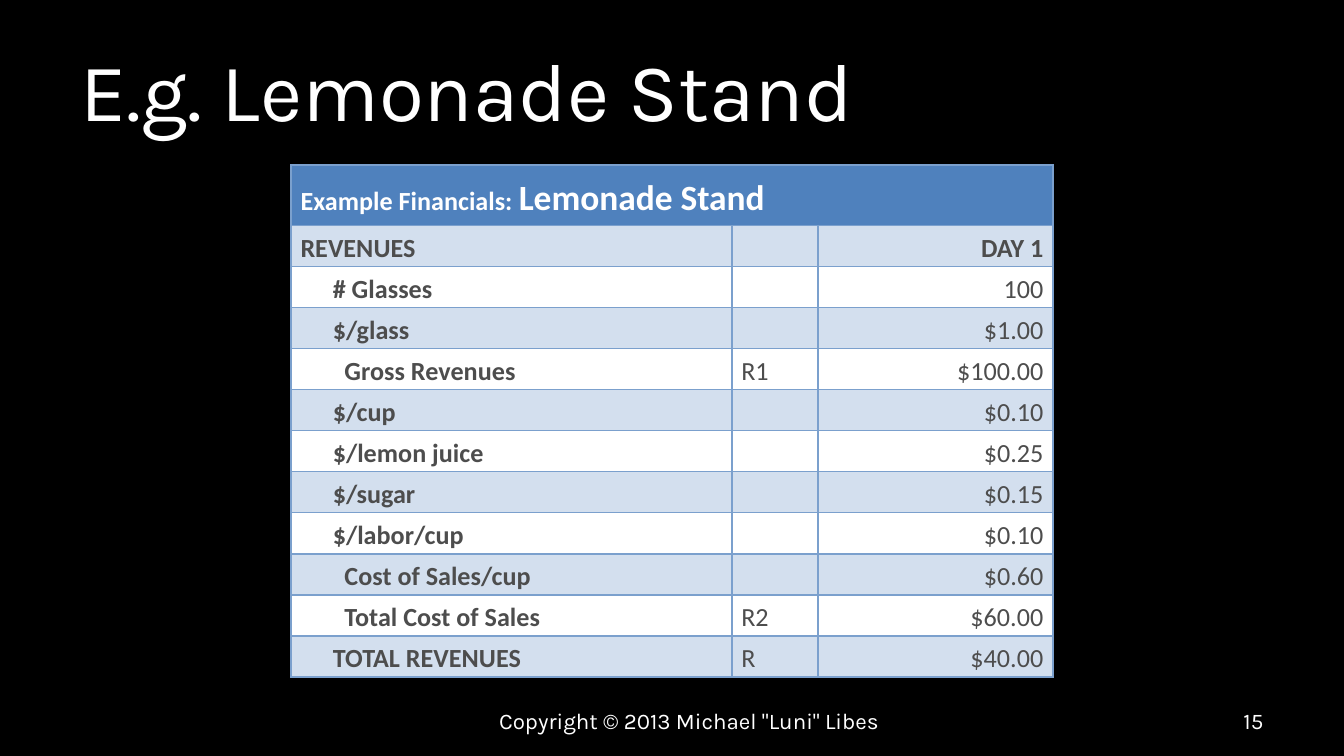
"""Build the lemonade stand financials slide."""
from dataclasses import dataclass

from lxml import etree
from pptx import Presentation
from pptx import util as u
from pptx.dml.color import RGBColor
from pptx.enum import shapes, text
from pptx.oxml import ns

BLACK, WHITE, GREY = "000000", "FFFFFF", "4D4D4D"
HEADER, BAND, BORDER = "4F81BD", "D3DFEE", "7BA0CD"
LEFT, CENTER, RIGHT = text.PP_ALIGN.LEFT, text.PP_ALIGN.CENTER, text.PP_ALIGN.RIGHT
PAGE_WIDTH, PAGE_HEIGHT = 25.4, 14.29
ITEM, SUBTOTAL = 0.61, 0.83
COLUMN_WIDTHS = (8.33, 1.63, 4.44)
TABLE_HEIGHT, HEADER_HEIGHT = 9.68, 1.14
BACKDROPS = ((13.02, 1.27), (0, 3.02), (0, PAGE_HEIGHT))


@dataclass(frozen=True)
class Line:
    label: str
    value: str
    code: str = ""
    indent: float = ITEM
    bold_value: bool = False


LINES = (
    Line("REVENUES", "DAY 1", indent=0, bold_value=True),
    Line("# Glasses", "100"),
    Line("$/glass", "$1.00"),
    Line("Gross Revenues", "$100.00", "R1", SUBTOTAL),
    Line("$/cup", "$0.10"),
    Line("$/lemon juice", "$0.25"),
    Line("$/sugar", "$0.15"),
    Line("$/labor/cup", "$0.10"),
    Line("Cost of Sales/cup", "$0.60", indent=SUBTOTAL),
    Line("Total Cost of Sales", "$60.00", "R2", SUBTOTAL),
    Line("TOTAL REVENUES", "$40.00", "R"),
)


def color(value: str) -> RGBColor:
    """Turn a hex string into a colour."""
    return RGBColor.from_string(value)


def format_font(font, name: str, size: float, shade: str, bold: bool = False) -> None:
    """Set the face, size, colour and weight of a font."""
    font.name, font.size, font.bold = name, u.Pt(size), bold
    font.color.rgb = color(shade)


def place(shape, left: float, top: float, width: float, height: float) -> None:
    """Move and size a shape in centimetres."""
    shape.left, shape.top = u.Cm(left), u.Cm(top)
    shape.width, shape.height = u.Cm(width), u.Cm(height)


def write(shape, words: str, size: float, align) -> None:
    """Write one white, vertically centred paragraph into a shape."""
    frame = shape.text_frame
    frame.word_wrap = True
    frame.auto_size = text.MSO_AUTO_SIZE.NONE
    frame.vertical_anchor = text.MSO_ANCHOR.MIDDLE
    para = frame.paragraphs[0]
    para.text, para.alignment = words, align
    format_font(para.font, "Karla", size, WHITE)


def add_backdrop(page, top: float, height: float) -> None:
    """Add a full-width black band behind the title."""
    band = page.shapes.add_shape(shapes.MSO_SHAPE.RECTANGLE, 0, 0, 0, 0)
    place(band, 0, top, PAGE_WIDTH, height)
    band.shadow.inherit = False
    band.fill.solid()
    band.fill.fore_color.rgb = color(BLACK)
    band.line.fill.background()
    page.shapes.title._element.addprevious(band._element)


def add_footer(page, words: str, left: float, width: float, align) -> None:
    """Add a text box on the footer line."""
    box = page.shapes.add_textbox(0, 0, 0, 0)
    place(box, left, 13.24, width, 0.76)
    write(box, words, 12, align)


def format_cell(cell, fill: str) -> None:
    """Set the fill, margins and borders of a cell."""
    cell.fill.solid()
    cell.fill.fore_color.rgb = color(fill)
    cell.vertical_anchor = text.MSO_ANCHOR.MIDDLE
    cell.margin_left = cell.margin_right = u.Cm(0.18)
    cell.margin_top = cell.margin_bottom = 0
    properties = cell._tc.get_or_add_tcPr()
    for index, side in enumerate(("lnL", "lnR", "lnT", "lnB")):
        edge = etree.Element(ns.qn(f"a:{side}"), w=str(u.Pt(1)))
        solid = etree.SubElement(edge, ns.qn("a:solidFill"))
        etree.SubElement(solid, ns.qn("a:srgbClr"), val=BORDER)
        properties.insert(index, edge)


def write_cell(cell, words: str, align, bold: bool, indent: float = 0) -> None:
    """Write one paragraph into a body cell."""
    para = cell.text_frame.paragraphs[0]
    para.text, para.alignment, para.line_spacing = words, align, 1.15
    if indent:
        properties = para._p.get_or_add_pPr()
        properties.set("marL", str(u.Cm(indent)))
        properties.set("indent", "0")
    format_font(para.font, "Calibri", 14, GREY, bold)


def add_financials(page) -> None:
    """Add the table of revenues and costs."""
    row_height = (TABLE_HEIGHT - HEADER_HEIGHT) / len(LINES)
    table = page.shapes.add_table(
        len(LINES) + 1, len(COLUMN_WIDTHS), u.Cm(5.5), u.Cm(3.12),
        u.Cm(sum(COLUMN_WIDTHS)), u.Cm(TABLE_HEIGHT)).table
    table.first_row = table.horz_banding = False
    for column, width in zip(table.columns, COLUMN_WIDTHS):
        column.width = u.Cm(width)
    for index, row in enumerate(table.rows):
        row.height = u.Cm(row_height if index else HEADER_HEIGHT)
        fill = (BAND if index % 2 else WHITE) if index else HEADER
        for cell in row.cells:
            format_cell(cell, fill)

    heading = table.cell(0, 0)
    heading.merge(table.cell(0, len(COLUMN_WIDTHS) - 1))
    para = heading.text_frame.paragraphs[0]
    para.line_spacing = 1.15
    for words, size in (("Example Financials: ", 14), ("Lemonade Stand", 19)):
        span = para.add_run()
        span.text = words
        format_font(span.font, "Calibri", size, WHITE, True)

    for index, line in enumerate(LINES, 1):
        label, code, value = table.rows[index].cells
        write_cell(label, line.label, LEFT, True, line.indent)
        write_cell(value, line.value, RIGHT, line.bold_value)
        if line.code:
            write_cell(code, line.code, LEFT, False)


def main() -> None:
    """Build and save the deck."""
    deck = Presentation()
    deck.slide_width, deck.slide_height = u.Cm(PAGE_WIDTH), u.Cm(PAGE_HEIGHT)
    page = deck.slides.add_slide(deck.slide_layouts[5])
    for top, height in BACKDROPS:
        add_backdrop(page, top, height)
    title = page.shapes.title
    place(title, 1.27, 0.48, 22.86, 2.39)
    write(title, "E.g. Lemonade Stand", 44, LEFT)
    add_footer(page, 'Copyright © 2013 Michael "Luni" Libes', 8.26, 9.53, CENTER)
    add_footer(page, "15", 18.21, 5.92, RIGHT)
    add_financials(page)
    deck.save("out.pptx")


if __name__ == "__main__":
    main()
